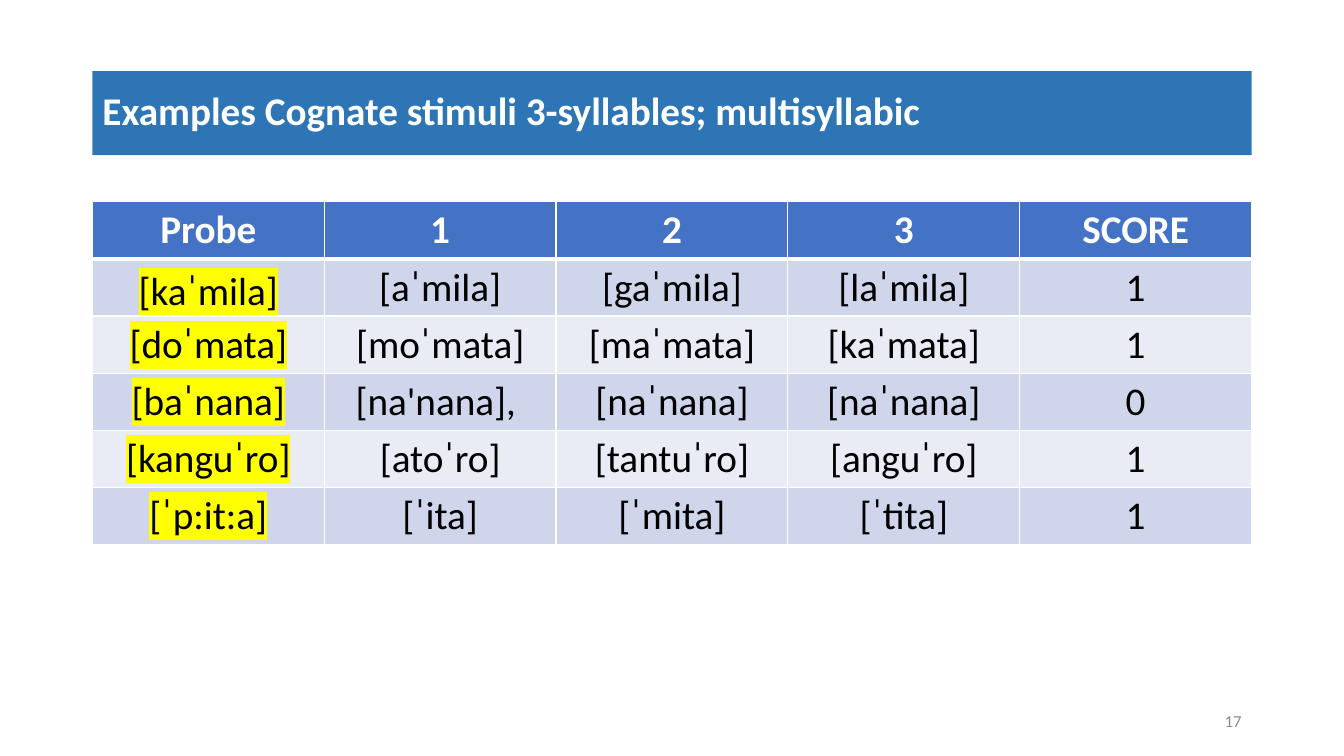
from lxml.etree import SubElement
from pptx import Presentation
from pptx.dml.color import RGBColor
from pptx.enum.text import MSO_ANCHOR, MSO_AUTO_SIZE, PP_ALIGN
from pptx.oxml.ns import qn
from pptx.util import Pt

COLORS = {
    "title": "2E75B6",
    "header": "4472C4",
    "odd": "CFD5EA",
    "even": "E9EBF5",
    "white": "FFFFFF",
    "black": "000000",
    "gray": "8C8C8C",
    "highlight": "FFFF00",
}
FONT = "Calibri"
LEFT, WIDTH = 66, 828
ROW_HEIGHT = 40.8
ROWS = [
    ["Probe", "1", "2", "3", "SCORE"],
    ["[kaˈmila]", "[aˈmila]", "[gaˈmila]", "[laˈmila]", "1"],
    ["[doˈmata]", "[moˈmata]", "[maˈmata]", "[kaˈmata]", "1"],
    ["[baˈnana]", "[na'nana], ", "[naˈnana]", "[naˈnana]", "0"],
    ["[kanguˈro]", "[atoˈro]", "[tantuˈro]", "[anguˈro]", "1"],
    ["[ˈp:it:a]", "[ˈita]", "[ˈmita]", "[ˈtita]", "1"],
]
TIGHT_CELLS = {
    (1, 0): MSO_ANCHOR.BOTTOM,
    (2, 1): MSO_ANCHOR.MIDDLE,
    (3, 1): MSO_ANCHOR.MIDDLE,
}


def color(name):
    return RGBColor.from_string(COLORS[name])


def add_text(frame, text, size, color_name, align, bold=False):
    para = frame.paragraphs[0]
    para.alignment = align
    span = para.add_run()
    span.text = text
    span.font.size = Pt(size)
    span.font.bold = bold
    span.font.color.rgb = color(color_name)
    return span


def highlight(span):
    properties = span.font._element
    mark = SubElement(properties, qn("a:highlight"))
    SubElement(mark, qn("a:srgbClr"), val=COLORS["highlight"])


def set_borders(cell, top, bottom):
    properties = cell._tc.get_or_add_tcPr()
    widths = {"a:lnL": 1, "a:lnR": 1, "a:lnT": top, "a:lnB": bottom}
    for tag, width in widths.items():
        line = SubElement(properties, qn(tag), w=str(Pt(width)))
        fill = SubElement(line, qn("a:solidFill"))
        SubElement(fill, qn("a:srgbClr"), val=COLORS["white"])


def add_title(page, text):
    title = page.shapes.title
    title.left, title.top = Pt(LEFT), Pt(50.75)
    title.width, title.height = Pt(WIDTH), Pt(60)
    title.fill.solid()
    title.fill.fore_color.rgb = color("title")
    frame = title.text_frame
    frame.word_wrap = True
    frame.auto_size = MSO_AUTO_SIZE.NONE
    frame.vertical_anchor = MSO_ANCHOR.MIDDLE
    span = add_text(frame, text, 28, "white", PP_ALIGN.LEFT, bold=True)
    span.font.name = FONT
    frame.paragraphs[0].line_spacing = 0.9


def fill_cell(cell, row, column, text):
    is_header = row == 0
    set_borders(cell, 3 if row == 1 else 1, 3 if is_header else 1)
    cell.fill.solid()
    band = "header" if is_header else "odd" if row % 2 else "even"
    cell.fill.fore_color.rgb = color(band)
    if (row, column) in TIGHT_CELLS:
        cell.vertical_anchor = TIGHT_CELLS[row, column]
        cell.margin_left = cell.margin_right = cell.margin_top = Pt(0.75)
        cell.margin_bottom = Pt(0)
    span = add_text(cell.text_frame, text, 28, "white" if is_header else "black",
                    PP_ALIGN.CENTER, bold=is_header)
    if column == 0 and not is_header:
        highlight(span)
    span.font.name = FONT


def add_stimuli_table(page):
    table = page.shapes.add_table(len(ROWS), len(ROWS[0]), Pt(LEFT), Pt(144),
                                  Pt(WIDTH), Pt(ROW_HEIGHT * len(ROWS))).table
    for row, texts in enumerate(ROWS):
        table.rows[row].height = Pt(ROW_HEIGHT)
        for column, text in enumerate(texts):
            fill_cell(table.cell(row, column), row, column, text)


def add_page_number(page, number):
    box = page.shapes.add_textbox(Pt(678), Pt(500.5), Pt(216), Pt(28.75))
    frame = box.text_frame
    frame.word_wrap = True
    frame.vertical_anchor = MSO_ANCHOR.MIDDLE
    span = add_text(frame, number, 12, "gray", PP_ALIGN.RIGHT)
    span.font.name = FONT


def main():
    deck = Presentation()
    deck.slide_width, deck.slide_height = Pt(960), Pt(540)
    page = deck.slides.add_slide(deck.slide_layouts[5])
    add_page_number(page, "17")
    add_title(page, "Examples Cognate stimuli 3-syllables; multisyllabic")
    add_stimuli_table(page)
    deck.save("out.pptx")


if __name__ == "__main__":
    main()
